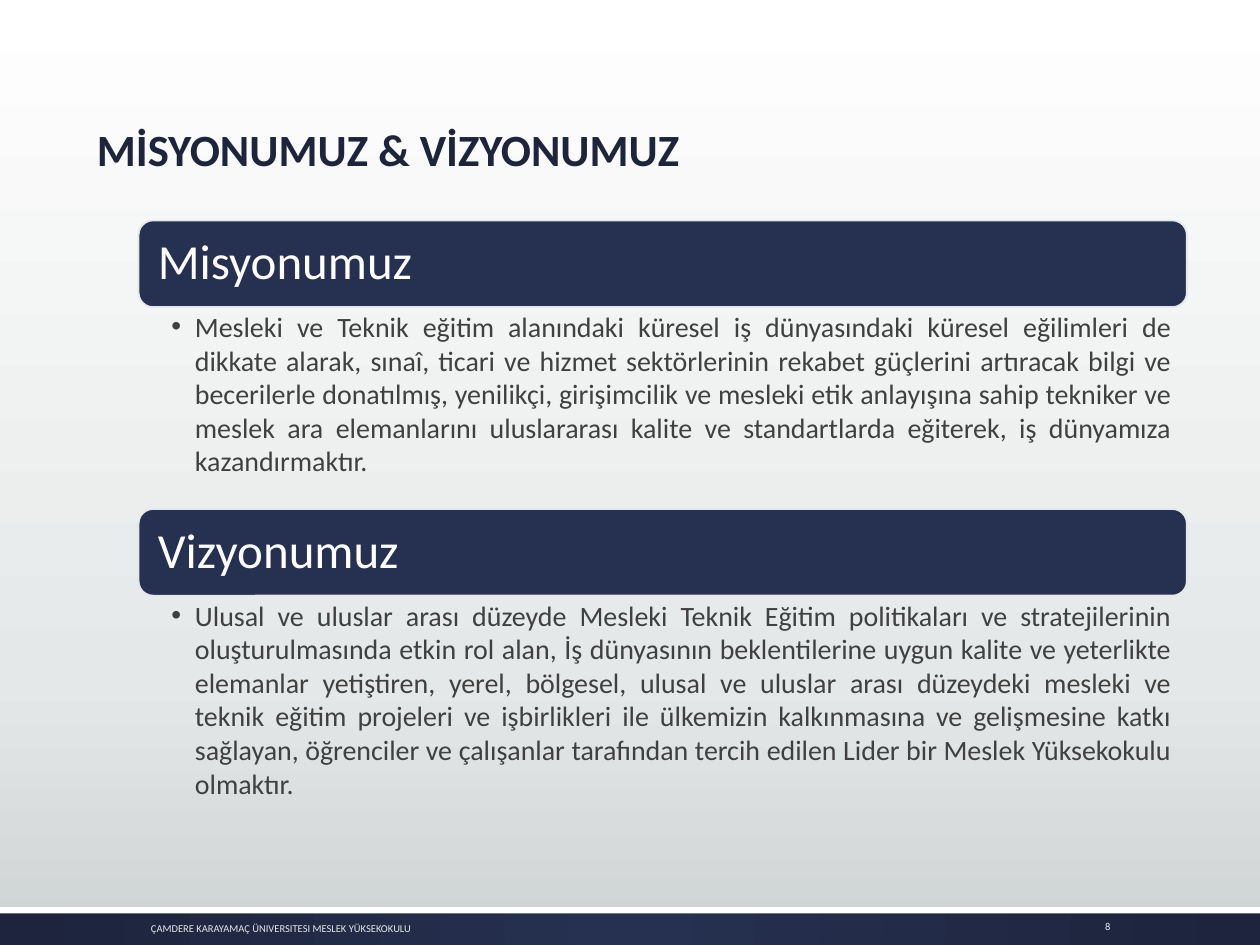
from lxml import etree
from pptx import Presentation
from pptx.dml.color import RGBColor
from pptx.enum.shapes import MSO_SHAPE
from pptx.enum.text import MSO_ANCHOR, MSO_AUTO_SIZE, PP_ALIGN
from pptx.oxml.ns import qn
from pptx.util import Pt

RECTANGLE = MSO_SHAPE.RECTANGLE
ROUNDED = MSO_SHAPE.ROUNDED_RECTANGLE
TOP, MIDDLE, BOTTOM = MSO_ANCHOR.TOP, MSO_ANCHOR.MIDDLE, MSO_ANCHOR.BOTTOM
LEFT, RIGHT, JUSTIFY = PP_ALIGN.LEFT, PP_ALIGN.RIGHT, PP_ALIGN.JUSTIFY
NO_FIT = MSO_AUTO_SIZE.NONE

NAVY = RGBColor(0x26, 0x30, 0x50)
DARK_NAVY = RGBColor(0x1D, 0x24, 0x3C)
WHITE = RGBColor(0xFF, 0xFF, 0xFF)
MIST = RGBColor(0xE5, 0xE8, 0xE8)
SILVER = RGBColor(0xCD, 0xD2, 0xD2)
CHARCOAL = RGBColor(0x40, 0x40, 0x40)

FONT = "Calibri"
BAR_HEIGHT = 49.5
SECTION_LEFT, SECTION_WIDTH = 79.2, 599

MISSION = (
    "Mesleki ve Teknik eğitim alanındaki küresel iş dünyasındaki küresel "
    "eğilimleri de dikkate alarak, sınaî, ticari ve hizmet sektörlerinin rekabet "
    "güçlerini artıracak bilgi ve becerilerle donatılmış, yenilikçi, girişimcilik "
    "ve mesleki etik anlayışına sahip tekniker ve meslek ara elemanlarını "
    "uluslararası kalite ve standartlarda eğiterek, iş dünyamıza kazandırmaktır."
)
VISION = (
    "Ulusal ve uluslar arası düzeyde Mesleki Teknik Eğitim politikaları ve "
    "stratejilerinin oluşturulmasında etkin rol alan, İş dünyasının beklentilerine "
    "uygun kalite ve yeterlikte elemanlar yetiştiren, yerel, bölgesel, ulusal ve "
    "uluslar arası düzeydeki mesleki ve teknik eğitim projeleri ve işbirlikleri ile "
    "ülkemizin kalkınmasına ve gelişmesine katkı sağlayan, öğrenciler ve çalışanlar "
    "tarafından tercih edilen Lider bir Meslek Yüksekokulu olmaktır."
)
SECTIONS = [
    ("Misyonumuz", MISSION, 126, 115.2),
    ("Vizyonumuz", VISION, 290.9, 133.2),
]


def place(item, box):
    item.left, item.top, item.width, item.height = (Pt(length) for length in box)


def write(item, text, size, color, align=LEFT, anchor=MIDDLE, bold=False,
          spacing=1.0, insets=(7.2, 3.6, 7.2, 3.6)):
    frame = item.text_frame
    frame.word_wrap = True
    frame.auto_size = NO_FIT
    frame.vertical_anchor = anchor
    (frame.margin_left, frame.margin_top,
     frame.margin_right, frame.margin_bottom) = (Pt(inset) for inset in insets)
    paragraph = frame.paragraphs[0]
    paragraph.alignment = align
    paragraph.line_spacing = spacing
    paragraph.space_before = Pt(0)
    run = paragraph.add_run()
    run.text = text
    run.font.name = FONT
    run.font.size = Pt(size)
    run.font.bold = bold
    run.font.color.rgb = color
    return paragraph


def add_panel(slide, preset, box, color):
    panel = slide.shapes.add_shape(preset, *(Pt(length) for length in box))
    panel.shadow.inherit = False
    panel.fill.solid()
    panel.fill.fore_color.rgb = color
    panel.line.fill.background()
    return panel


def set_gradient(fill, owner, stops, radial=False):
    fill.gradient()
    gradient = owner.find(".//" + qn("a:gradFill"))
    for child in list(gradient):
        gradient.remove(child)
    stop_list = etree.SubElement(gradient, qn("a:gsLst"))
    for percent, color in stops:
        stop = etree.SubElement(stop_list, qn("a:gs"), pos=str(percent * 1000))
        etree.SubElement(stop, qn("a:srgbClr"), val=str(color))
    if radial:
        shade = etree.SubElement(gradient, qn("a:path"), path="circle")
        etree.SubElement(shade, qn("a:fillToRect"),
                         dict.fromkeys("ltrb", "50000"))
    else:
        etree.SubElement(gradient, qn("a:lin"), ang="5400000", scaled="0")


def fill_title(title, box):
    place(title, box)
    write(title, "MİSYONUMUZ & VİZYONUMUZ", 25.5, DARK_NAVY,
          anchor=BOTTOM, bold=True, spacing=0.9)


def add_section(slide, body, box, heading, statement):
    left, top, width, height = box
    bar = add_panel(slide, ROUNDED, (left, top, width, BAR_HEIGHT), NAVY)
    bar.line.color.rgb = MIST
    bar.line.width = Pt(1)
    write(bar, heading, 28, WHITE, spacing=0.9, insets=(8.6, 8.6, 8.6, 8.6))

    place(body, (left, top + BAR_HEIGHT, width, height - BAR_HEIGHT))
    paragraph = write(body, statement, 16, CHARCOAL, align=JUSTIFY, anchor=TOP,
                      insets=(18.7, 1.4, 8.6, 1.4))
    paragraph.level = 1
    properties = paragraph._p.get_or_add_pPr()
    properties.set("marL", str(Pt(13.5)))
    properties.set("indent", str(Pt(-13.5)))
    etree.SubElement(properties, qn("a:buChar"), char="•")


def add_footer(slide, box):
    left, top, width, height = box
    band = add_panel(slide, RECTANGLE, box, NAVY)
    set_gradient(band.fill, band.element, [(0, NAVY), (100, DARK_NAVY)], radial=True)
    add_panel(slide, RECTANGLE, (left, top, width, 3.6), WHITE)
    labels = [
        ("ÇAMDERE KARAYAMAÇ ÜNIVERSITESI MESLEK YÜKSEKOKULU", 79.2, 2.9, 422.6, LEFT),
        ("8", 603.4, 1.4, 38.2, RIGHT),
    ]
    for text, offset, drop, label_width, align in labels:
        label = slide.shapes.add_textbox(
            Pt(left + offset), Pt(top + drop), Pt(label_width), Pt(18.7))
        write(label, text, 6, MIST, align=align)


def main():
    deck = Presentation()
    deck.slide_width, deck.slide_height = Pt(720), Pt(540)
    slide = deck.slides.add_slide(deck.slide_layouts[3])
    set_gradient(slide.background.fill, slide.element,
                 [(0, WHITE), (72, MIST), (100, SILVER)])
    title, *bodies = slide.placeholders
    fill_title(title, (48.2, 36.7, 617.8, 67.7))
    for body, (heading, statement, top, body_height) in zip(bodies, SECTIONS):
        box = (SECTION_LEFT, top, SECTION_WIDTH, BAR_HEIGHT + body_height)
        add_section(slide, body, box, heading, statement)
    add_footer(slide, (0, 518.4, 720, 21.6))
    deck.save("out.pptx")


if __name__ == "__main__":
    main()
